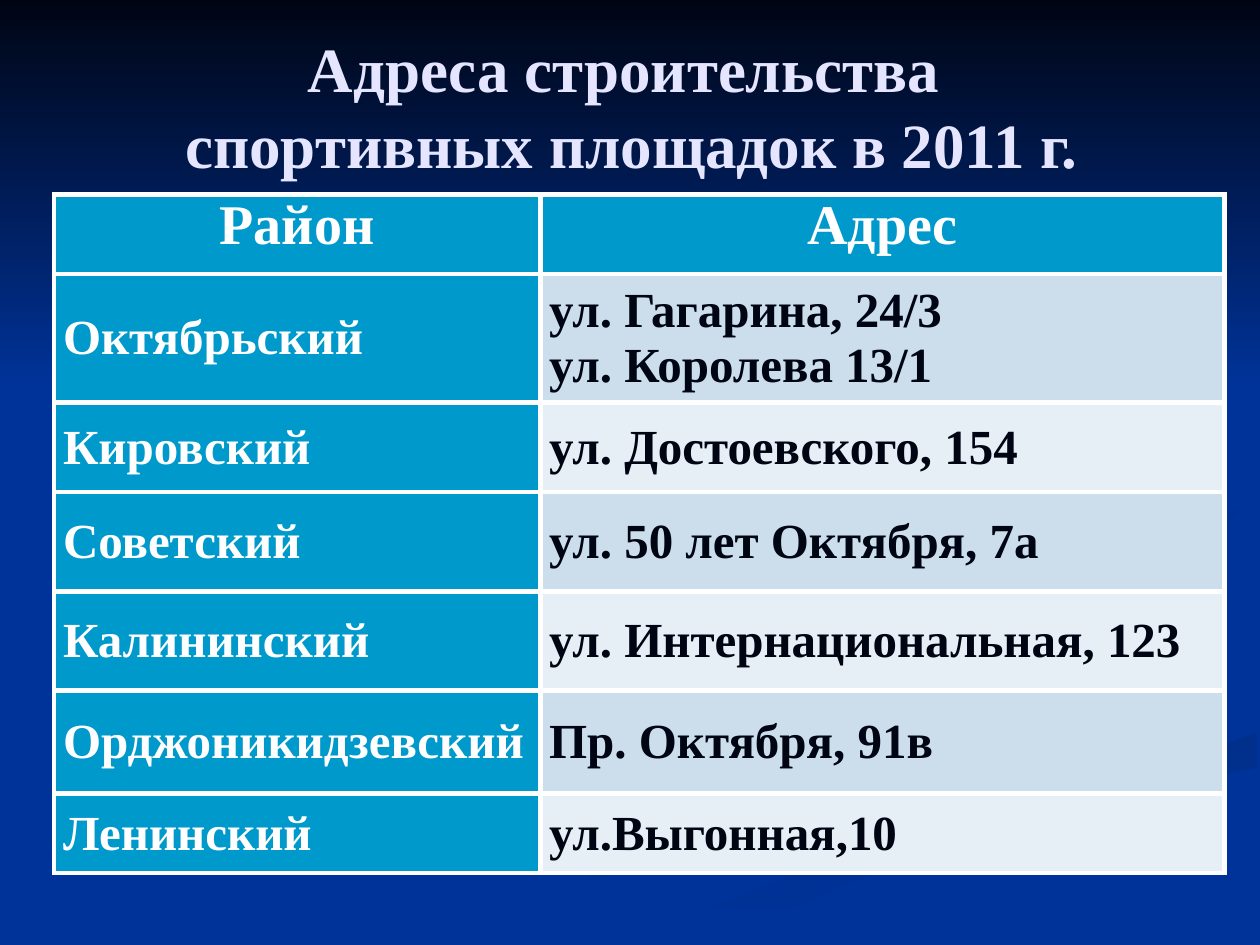
from lxml import etree
from pptx import Presentation
from pptx import util as u
from pptx.dml.color import RGBColor
from pptx.enum import text
from pptx.oxml import ns

NIGHT = RGBColor(0x00, 0x05, 0x14)
DEEP = RGBColor(0x00, 0x2F, 0x8C)
DUSK = RGBColor(0x00, 0x31, 0x93)
BLUE = RGBColor(0x00, 0x33, 0x99)
CYAN = RGBColor(0x00, 0x99, 0xCC)
BAND = RGBColor(0xCC, 0xDE, 0xEC)
PALE = RGBColor(0xE7, 0xEF, 0xF6)
LILAC = RGBColor(0xE5, 0xE5, 0xFF)
WHITE = RGBColor(0xFF, 0xFF, 0xFF)

LOWER_RIBBON = [
    (762, 1902), (917, 1902), (1184, 1778), (1433, 1689), (1717, 1610),
    (1981, 1537), (2032, 1476), (1984, 1405), (1732, 1318), (1509, 1232),
    (1460, 1166), (1448, 1199), (1603, 1283), (1910, 1379), (1996, 1438),
    (1928, 1499), (1656, 1575), (1267, 1679), (955, 1796)]
WIDE_RIBBON = [
    (1278, 1902), (1450, 1902), (1560, 1844), (1702, 1783), (1910, 1707),
    (2187, 1626), (2535, 1547), (2535, 1476), (2413, 1519), (2202, 1575),
    (1941, 1643), (1681, 1730), (1445, 1826)]
EDGE_RIBBON = [
    (1984, 1168), (2098, 1260), (2045, 1199), (2103, 1151), (2230, 1115),
    (2377, 1090), (2535, 1067), (2535, 1021), (2370, 1054), (2197, 1077),
    (2057, 1110)]
TOP_BAND = [(0, 0), (2540, 0), (2540, 782), (0, 782)]

HEADER = ("Район", "Адрес")
ADDRESSES = [
    ("Октябрьский", "ул. Гагарина, 24/3\nул. Королева 13/1"),
    ("Кировский", "ул. Достоевского, 154"),
    ("Советский", "ул. 50 лет Октября, 7а"),
    ("Калининский", "ул. Интернациональная, 123"),
    ("Орджоникидзевский", "Пр. Октября, 91в"),
    ("Ленинский", "ул.Выгонная,10"),
]
COLUMN_WIDTHS = (9.8, 13.8)
ROW_HEIGHTS = (1.6, 2.6, 1.8, 2, 2, 2.08, 1.6)


class SlideBuilder:
    """Hold the text style and the current slide, and add its elements."""

    def __init__(self, slide):
        self.slide = slide
        self.style = {"name": "Times New Roman", "bold": True}

    def background(self, color):
        fill = self.slide.background.fill
        fill.solid()
        fill.fore_color.rgb = color

    def fill_text(self, frame, content, size, color, alignment):
        frame.text = content
        for paragraph in frame.paragraphs:
            paragraph.alignment = alignment
            for run in paragraph.runs:
                for key, value in {**self.style, "size": u.Pt(size)}.items():
                    setattr(run.font, key, value)
                run.font.color.rgb = color

    def gradient_outline(self, points, colors, angle):
        builder = self.slide.shapes.build_freeform(*points[0], scale=u.Cm(0.01))
        builder.add_line_segments(points[1:], close=True)
        shape = builder.convert_to_shape()
        shape.shadow.inherit = False
        shape.line.fill.background()
        shape.fill.gradient()
        shape.fill.gradient_angle = angle
        for stop, color in zip(shape.fill.gradient_stops, colors):
            stop.color.rgb = color

    def title(self, content):
        shape = self.slide.shapes.title
        place = {"left": 1.3, "top": 0.53, "width": 22.86, "height": 3.18}
        for key, value in place.items():
            setattr(shape, key, u.Cm(value))
        shape.text_frame.vertical_anchor = text.MSO_ANCHOR.MIDDLE
        self.fill_text(shape.text_frame, content, 36, LILAC, text.PP_ALIGN.CENTER)
        shape.element.getparent().append(shape.element)

    def borders(self, cell):
        properties = cell._tc.get_or_add_tcPr()
        for index, side in enumerate(("lnL", "lnR", "lnT", "lnB")):
            line = etree.Element(ns.qn(f"a:{side}"), w=str(u.Pt(3)))
            fill = etree.SubElement(line, ns.qn("a:solidFill"))
            etree.SubElement(fill, ns.qn("a:srgbClr"), val=str(WHITE))
            properties.insert(index, line)

    def cell(self, cell, content, size, color, fill, alignment, anchor):
        values = {"margin_left": u.Cm(0.18), "margin_right": u.Cm(0.18),
                  "margin_top": 0, "margin_bottom": 0, "vertical_anchor": anchor}
        for key, value in values.items():
            setattr(cell, key, value)
        cell.fill.solid()
        cell.fill.fore_color.rgb = fill
        self.borders(cell)
        self.fill_text(cell.text_frame, content, size, color, alignment)

    def table(self, left, top):
        rows = [HEADER, *ADDRESSES]
        table = self.slide.shapes.add_table(
            len(rows), len(HEADER), u.Cm(left), u.Cm(top),
            u.Cm(sum(COLUMN_WIDTHS)), u.Cm(sum(ROW_HEIGHTS))).table
        for column, width in zip(table.columns, COLUMN_WIDTHS):
            column.width = u.Cm(width)
        for row, height in zip(table.rows, ROW_HEIGHTS):
            row.height = u.Cm(height)
        for r, contents in enumerate(rows):
            size, alignment, anchor = (
                (28, text.PP_ALIGN.JUSTIFY, text.MSO_ANCHOR.MIDDLE) if r
                else (32, text.PP_ALIGN.CENTER, text.MSO_ANCHOR.TOP))
            for c, content in enumerate(contents):
                color, fill = WHITE, CYAN
                if r and c:
                    color, fill = NIGHT, BAND if r % 2 else PALE
                self.cell(table.cell(r, c), content, size, color, fill,
                          alignment, anchor)


def main():
    presentation = Presentation()
    presentation.slide_width = u.Cm(25.4)
    presentation.slide_height = u.Cm(19.05)
    slide = presentation.slides.add_slide(presentation.slide_layouts[5])
    builder = SlideBuilder(slide)
    builder.background(BLUE)
    builder.gradient_outline(LOWER_RIBBON, (BLUE, DUSK), 0)
    builder.gradient_outline(WIDE_RIBBON, (DEEP, BLUE), 270)
    builder.gradient_outline(EDGE_RIBBON, (DUSK, BLUE), 315)
    builder.gradient_outline(TOP_BAND, (NIGHT, BLUE), 270)
    builder.table(1.09, 3.92)
    builder.title("Адреса строительства \vспортивных площадок в 2011 г.")
    presentation.save("out.pptx")


if __name__ == "__main__":
    main()
